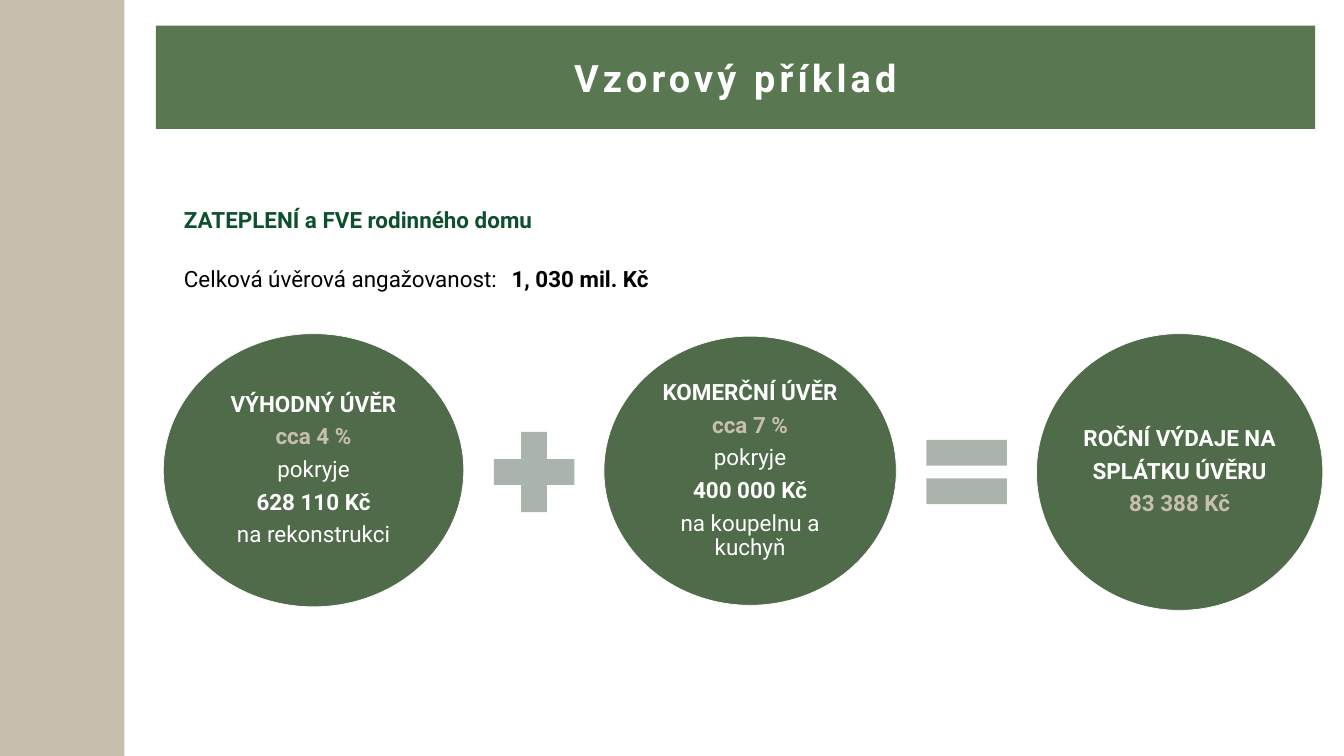
import pptx
import pptx.dml.color
import pptx.enum.shapes
import pptx.enum.text
import pptx.util

Inches = pptx.util.Inches
Pt = pptx.util.Pt
RGBColor = pptx.dml.color.RGBColor
SHAPE = pptx.enum.shapes.MSO_SHAPE
ALIGN = pptx.enum.text.PP_ALIGN
ANCHOR = pptx.enum.text.MSO_ANCHOR

WHITE = RGBColor(0xFF, 0xFF, 0xFF)
BLACK = RGBColor(0x00, 0x00, 0x00)
SAND = RGBColor(0xC7, 0xBF, 0xAD)
BANNER_GREEN = RGBColor(0x59, 0x77, 0x51)
CIRCLE_GREEN = RGBColor(0x50, 0x6B, 0x49)
HEADING_GREEN = RGBColor(0x0E, 0x50, 0x2E)
GREY = RGBColor(0xAB, 0xB3, 0xAD)

BODY_SIZE = Pt(32)
CIRCLE_PARAGRAPH = {"alignment": ALIGN.CENTER, "line_spacing": 0.9, "space_after": Pt(12)}
CIRCLE_FRAME = {"word_wrap": True, "vertical_anchor": ANCHOR.MIDDLE}
CIRCLE_FRAME.update({f"margin_{side}": Inches(0.04) for side in ("left", "top", "right", "bottom")})

CIRCLES = [
    ((3.24, 6.62, 5.96, 5.42), [
        ("VÝHODNÝ ÚVĚR", WHITE, True),
        ("cca 4 %", SAND, True),
        ("pokryje", WHITE, False),
        ("628 110 Kč", WHITE, True),
        ("na rekonstrukci", WHITE, False),
    ]),
    ((11.98, 6.67, 5.8, 5.34), [
        ("KOMERČNÍ ÚVĚR", WHITE, True),
        ("cca 7 %", SAND, True),
        ("pokryje", WHITE, False),
        ("400 000 Kč", WHITE, True),
        ("na koupelnu a kuchyň", WHITE, False),
    ]),
    ((20.56, 6.62, 5.68, 5.49), [
        ("ROČNÍ VÝDAJE NA", WHITE, True),
        ("SPLÁTKU ÚVĚRU", WHITE, True),
        ("83 388 Kč", SAND, True),
    ]),
]
OPERATORS = [(SHAPE.MATH_PLUS, 9.51), (SHAPE.MATH_EQUAL, 18.09)]


def apply_format(target, values):
    for attribute, value in values.items():
        setattr(target, attribute, value)


def add_run(paragraph, text, color, bold, size=BODY_SIZE):
    run = paragraph.add_run()
    run.text = text
    apply_format(run.font, {"name": "Roboto", "size": size, "bold": bold})
    run.font.color.rgb = color
    return run


def add_paragraphs(frame, paragraphs, values):
    """Fill the frame; each paragraph is a list of (text, color, bold) runs."""
    for index, runs in enumerate(paragraphs):
        paragraph = frame.add_paragraph() if index else frame.paragraphs[0]
        apply_format(paragraph, values)
        for run in runs:
            add_run(paragraph, *run)


def add_figure(slide, kind, box, fill, outline=None):
    figure = slide.shapes.add_shape(kind, *map(Inches, box))
    figure.shadow.inherit = False
    figure.fill.solid()
    figure.fill.fore_color.rgb = fill
    if outline is None:
        figure.line.fill.background()
    else:
        figure.line.color.rgb = outline
        figure.line.width = Pt(1)
    return figure


def add_banner(slide, title):
    banner = add_figure(slide, SHAPE.RECTANGLE, (3.09, 0.51, 23, 2.05), BANNER_GREEN)
    banner.text_frame.vertical_anchor = ANCHOR.MIDDLE
    paragraph = banner.text_frame.paragraphs[0]
    paragraph.alignment = ALIGN.CENTER
    run = add_run(paragraph, title, WHITE, True, Pt(54))
    run.font._element.set("spc", "600")


def add_circle(slide, box, lines):
    circle = add_figure(slide, SHAPE.OVAL, box, CIRCLE_GREEN, WHITE)
    apply_format(circle.text_frame, CIRCLE_FRAME)
    add_paragraphs(circle.text_frame, [[line] for line in lines], CIRCLE_PARAGRAPH)


def add_intro(slide):
    intro = slide.shapes.add_textbox(*map(Inches, (3.55, 3.98, 13.35, 1.83))).text_frame
    intro.word_wrap = True
    add_paragraphs(intro, [
        [("ZATEPLENÍ a FVE rodinného domu", HEADING_GREEN, True)],
        [("Celková úvěrová angažovanost:\t", BLACK, False), ("1, 030 mil. Kč", BLACK, True)],
    ], {"line_spacing": 1.1})
    intro.paragraphs[1].space_before = Pt(42)


def main():
    deck = pptx.Presentation()
    apply_format(deck, {"slide_width": Inches(26.66), "slide_height": Inches(15)})
    slide = deck.slides.add_slide(deck.slide_layouts[6])

    add_figure(slide, SHAPE.RECTANGLE, (0, 0, 2.47, 15), SAND)
    add_banner(slide, "Vzorový příklad")
    for box, lines in CIRCLES:
        add_circle(slide, box, lines)
    for operator, left in OPERATORS:
        add_figure(slide, operator, (left, 8.28, 2.17, 2.17), GREY)
    add_intro(slide)

    deck.save("out.pptx")


if __name__ == "__main__":
    main()
